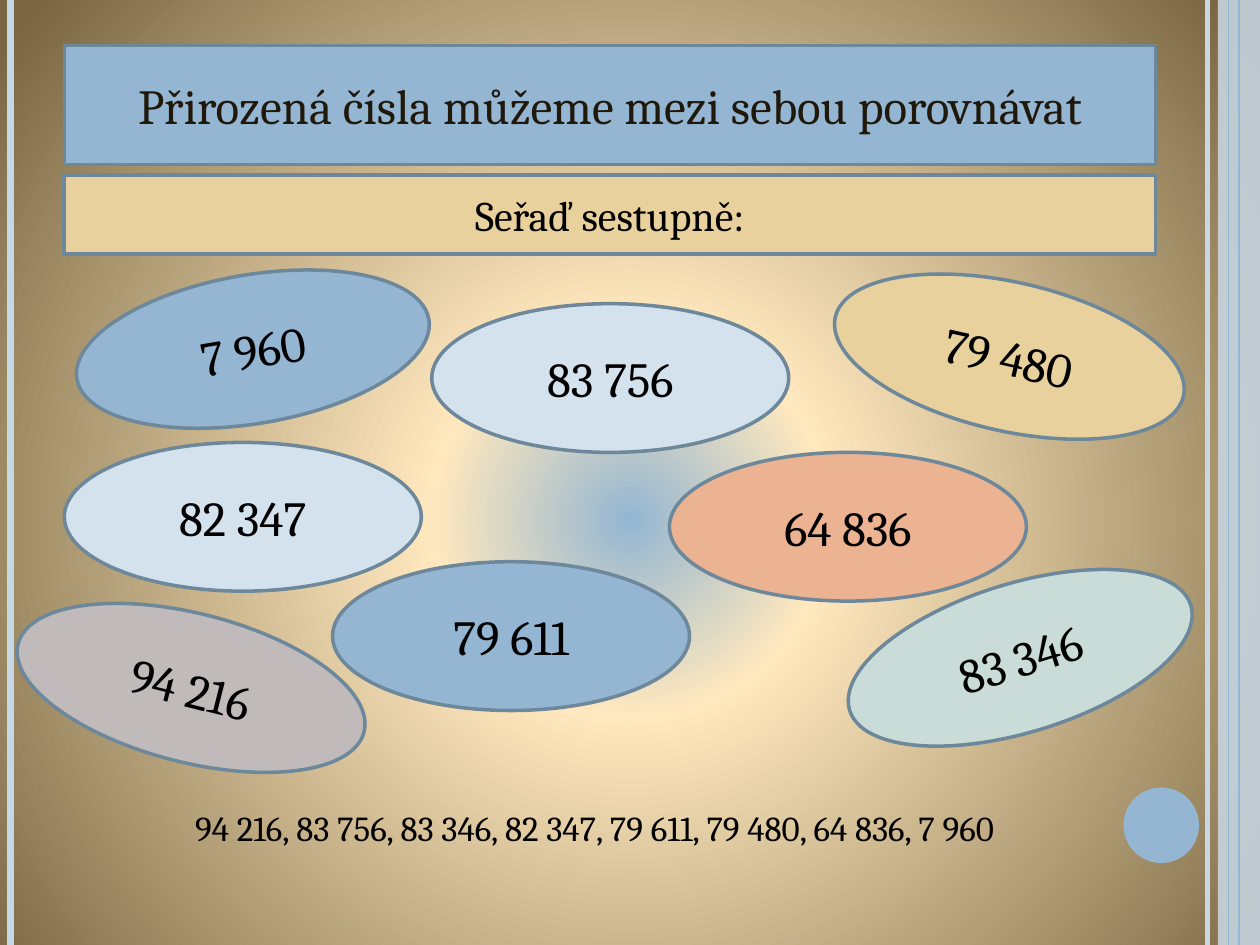
from lxml import etree
from pptx import Presentation
from pptx.dml.color import RGBColor
from pptx.enum.shapes import MSO_CONNECTOR, MSO_SHAPE
from pptx.enum.text import MSO_ANCHOR, MSO_AUTO_SIZE, PP_ALIGN
from pptx.oxml import parse_xml
from pptx.oxml.ns import nsdecls, qn
from pptx.util import Pt

STRAIGHT = MSO_CONNECTOR.STRAIGHT
RECTANGLE, OVAL = MSO_SHAPE.RECTANGLE, MSO_SHAPE.OVAL
MIDDLE, CENTER = MSO_ANCHOR.MIDDLE, PP_ALIGN.CENTER
NO_AUTOFIT, GROW = MSO_AUTO_SIZE.NONE, MSO_AUTO_SIZE.SHAPE_TO_FIT_TEXT

BLUE = RGBColor(0x94, 0xB6, 0xD2)
PALE_BLUE = RGBColor(0xD4, 0xE2, 0xED)
STRIPE = RGBColor(0xC8, 0xD7, 0xE5)
OUTLINE = RGBColor(0x6D, 0x87, 0x9B)
SAND = RGBColor(0xE8, 0xD1, 0x9D)
CREAM = RGBColor(0xFF, 0xE8, 0xBE)
BROWN = RGBColor(0x7A, 0x67, 0x42)
SALMON = RGBColor(0xEB, 0xB3, 0x91)
GREY = RGBColor(0xC0, 0xBA, 0xBA)
MINT = RGBColor(0xCA, 0xDC, 0xD8)
DARK = RGBColor(0x20, 0x19, 0x0B)
BLACK = RGBColor(0, 0, 0)

SLIDE_W, SLIDE_H = 720, 540
BAR_LEFT, BAR_W = 36.75, 623.5
OVAL_W, OVAL_H = 204, 85


def write(shape, text, size, color):
    frame = shape.text_frame
    frame.word_wrap = True
    frame.vertical_anchor = MIDDLE
    paragraph = frame.paragraphs[0]
    paragraph.alignment = CENTER
    run = paragraph.add_run()
    run.text = text
    run.font.name = "Cambria"
    run.font.size = Pt(size)
    run.font.color.rgb = color


def paint(shape, fill, outlined=True):
    shape.fill.solid()
    shape.fill.fore_color.rgb = fill
    if outlined:
        shape.line.color.rgb = OUTLINE
        shape.line.width = Pt(2)
    else:
        shape.line.fill.background()


prs = Presentation()
prs.slide_width, prs.slide_height = Pt(SLIDE_W), Pt(SLIDE_H)
slide = prs.slides.add_slide(prs.slide_layouts[5])
shapes = slide.shapes

stops = "".join(
    f'<a:gs pos="{position * 1000}"><a:srgbClr val="{color}"/></a:gs>'
    for position, color in [(0, SALMON), (0, PALE_BLUE), (0, BLUE), (25, CREAM), (100, BROWN)]
)
background = parse_xml(
    f'<p:bg {nsdecls("p", "a")}><p:bgPr><a:gradFill rotWithShape="1"><a:gsLst>{stops}</a:gsLst>'
    '<a:path path="circle"><a:fillToRect l="10000" t="110000" r="10000" b="100000"/></a:path>'
    "</a:gradFill><a:effectLst/></p:bgPr></p:bg>"
)
slide.element.cSld.insert(0, background)

side_band = shapes.add_shape(RECTANGLE, Pt(696), Pt(0), Pt(24), Pt(SLIDE_H))
side_band.shadow.inherit = False
paint(side_band, STRIPE, outlined=False)
band_color = side_band.element.spPr.find(f'{qn("a:solidFill")}/{qn("a:srgbClr")}')
etree.SubElement(band_color, qn("a:alpha"), val="87000")

for x, color, width in [
    (690, STRIPE, 3), (6, STRIPE, 4.5), (708, BLUE, 1.5), (702, BLUE, 0.75),
]:
    stripe = shapes.add_connector(STRAIGHT, Pt(x), Pt(0), Pt(x), Pt(SLIDE_H))
    stripe.line.color.rgb = color
    stripe.line.width = Pt(width)
    etree.SubElement(stripe.element.spPr, qn("a:effectLst"))

corner_dot = shapes.add_shape(OVAL, Pt(642), Pt(450), Pt(43.2), Pt(43.2))
corner_dot.shadow.inherit = False
paint(corner_dot, BLUE, outlined=False)

heading = shapes.title
heading.left, heading.top = Pt(BAR_LEFT), Pt(26)
heading.width, heading.height = Pt(BAR_W), Pt(68)
heading.text_frame.auto_size = NO_AUTOFIT
paint(heading, BLUE)
write(heading, "Přirozená čísla můžeme mezi sebou porovnávat", 28, DARK)

task = shapes.add_shape(RECTANGLE, Pt(BAR_LEFT), Pt(100), Pt(BAR_W), Pt(45.2))
task.shadow.inherit = False
paint(task, SAND)
write(task, "Seřaď sestupně:", 24, BLACK)

for number, left, top, angle, color in [
    ("7 960", 42.5, 157, -9.6, BLUE),
    ("79 480", 474.8, 161.3, 12.8, SAND),
    ("94 216", 7.2, 350.6, 14.3, GREY),
    ("83 346", 481, 333.4, -17.1, MINT),
    ("79 611", 190, 321, 0, BLUE),
    ("64 836", 382.5, 258.5, 0, SALMON),
    ("83 756", 246.7, 173.5, 0, PALE_BLUE),
    ("82 347", 36.75, 252.8, 0, PALE_BLUE),
]:
    number_oval = shapes.add_shape(OVAL, Pt(left), Pt(top), Pt(OVAL_W), Pt(OVAL_H))
    number_oval.shadow.inherit = False
    number_oval.rotation = angle
    paint(number_oval, color)
    write(number_oval, number, 28, BLACK)

answer = shapes.add_textbox(Pt(31), Pt(457.2), Pt(618), Pt(31.5))
answer.text_frame.auto_size = GROW
write(answer, "94 216, 83 756, 83 346, 82 347, 79 611, 79 480, 64 836, 7 960", 20, BLACK)

prs.save("out.pptx")
